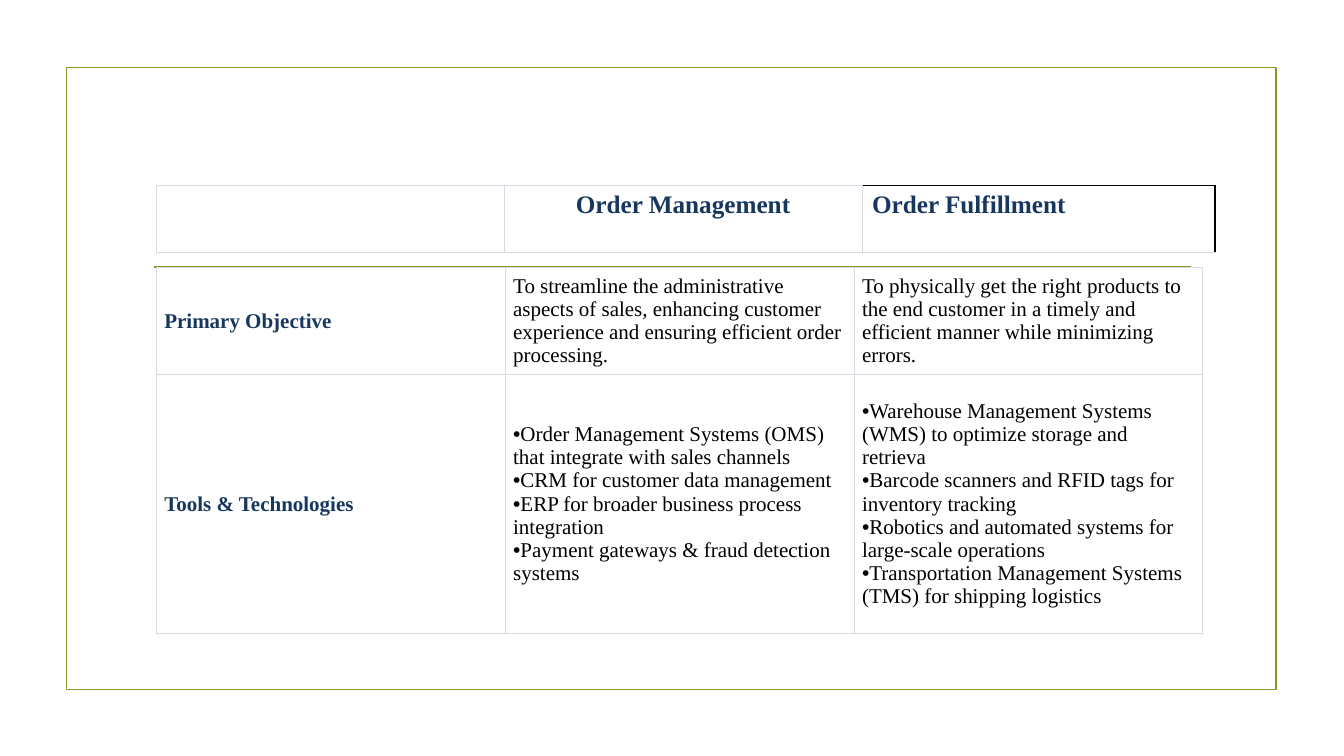
from dataclasses import dataclass

from lxml.etree import SubElement
from pptx import Presentation
from pptx.dml.color import RGBColor
from pptx.enum.shapes import MSO_CONNECTOR, MSO_SHAPE
from pptx.enum.text import MSO_ANCHOR, PP_ALIGN
from pptx.oxml.ns import qn
from pptx.slide import Slide
from pptx.table import Table, _Cell
from pptx.util import Inches, Pt

FONT = "Times New Roman"
OLIVE, NAVY, BLACK, GREY, WHITE = "83992A", "17375E", "000000", "D9D9E3", "FFFFFF"


@dataclass(frozen=True)
class Entry:
    lines: tuple[str, ...]
    size: int = 15
    colour: str = BLACK
    bold: bool = False
    bulleted: bool = False
    align: PP_ALIGN = PP_ALIGN.LEFT
    anchor: MSO_ANCHOR = MSO_ANCHOR.MIDDLE
    margins: tuple[float, float] = (0.08, 0.04)
    outer_edge: str = GREY


def heading(text: str, align: PP_ALIGN = PP_ALIGN.LEFT, outer_edge: str = GREY) -> Entry:
    return Entry((text,), 18, NAVY, True, align=align, anchor=MSO_ANCHOR.TOP,
                 margins=(0.1, 0.05), outer_edge=outer_edge)


def row_label(text: str) -> Entry:
    return Entry((text,), colour=NAVY, bold=True)


def tool_list(*tools: str) -> Entry:
    return Entry(tools, bulleted=True)


HEADINGS = [[
    heading(""),
    heading("Order Management", PP_ALIGN.CENTER),
    heading("Order Fulfillment", outer_edge=BLACK),
]]

COMPARISON = [
    [
        row_label("Primary Objective"),
        Entry(("To streamline the administrative aspects of sales, enhancing customer "
               "experience and ensuring efficient order processing.",)),
        Entry(("To physically get the right products to the end customer in a timely and "
               "efficient manner while minimizing errors.",)),
    ],
    [
        row_label("Tools & Technologies"),
        tool_list(
            "Order Management Systems (OMS) that integrate with sales channels",
            "CRM for customer data management",
            "ERP for broader business process integration",
            "Payment gateways & fraud detection systems",
        ),
        tool_list(
            "Warehouse Management Systems (WMS) to optimize storage and retrieva",
            "Barcode scanners and RFID tags for inventory tracking",
            "Robotics and automated systems for large-scale operations",
            "Transportation Management Systems (TMS) for shipping logistics",
        ),
    ],
]


def rgb(colour: str) -> RGBColor:
    return RGBColor.from_string(colour)


def set_borders(cell: _Cell, outer_edge: str) -> None:
    properties = cell._tc.get_or_add_tcPr()
    edges = {"a:lnL": GREY, "a:lnR": outer_edge, "a:lnT": outer_edge, "a:lnB": GREY}
    for tag, colour in edges.items():
        width = Pt(0.75) if colour == GREY else Pt(1)
        border = SubElement(properties, qn(tag), w=str(width))
        fill = SubElement(border, qn("a:solidFill"))
        SubElement(fill, qn("a:srgbClr"), val=colour)


def fill_cell(cell: _Cell, entry: Entry) -> None:
    set_borders(cell, entry.outer_edge)
    cell.fill.solid()
    cell.fill.fore_color.rgb = rgb(WHITE)
    cell.vertical_anchor = entry.anchor
    side, end = entry.margins
    cell.margin_left = cell.margin_right = Inches(side)
    cell.margin_top = cell.margin_bottom = Inches(end)
    cell.text_frame.text = "\n".join(entry.lines)
    for paragraph in cell.text_frame.paragraphs:
        if entry.bulleted:
            properties = paragraph._p.get_or_add_pPr()
            properties.set("marL", "0")
            properties.set("indent", "0")
            SubElement(properties, qn("a:buFont"), typeface="Arial")
            SubElement(properties, qn("a:buChar"), char="•")
        paragraph.alignment = entry.align
        for run in paragraph.runs:
            run.font.name = FONT
            run.font.size = Pt(entry.size)
            run.font.bold = entry.bold
            run.font.color.rgb = rgb(entry.colour)


def draw_table(slide: Slide, entries: list[list[Entry]], top: float,
               widths: list[float], heights: list[float]) -> Table:
    table = slide.shapes.add_table(
        len(heights), len(widths), Inches(1.55), Inches(top),
        Inches(sum(widths)), Inches(sum(heights))).table
    table.first_row = table.horz_banding = False
    for column, width in zip(table.columns, widths):
        column.width = Inches(width)
    for row, height, row_entries in zip(table.rows, heights, entries):
        row.height = Inches(height)
        for cell, entry in zip(row.cells, row_entries):
            fill_cell(cell, entry)
    return table


def draw_frame(slide: Slide) -> None:
    frame = slide.shapes.add_shape(
        MSO_SHAPE.RECTANGLE, Inches(0.66), Inches(0.67), Inches(12), Inches(6.17))
    frame.shadow.inherit = False
    frame.fill.background()
    frame.line.color.rgb = rgb(OLIVE)
    frame.line.width = Pt(1.25)


def draw_divider(slide: Slide) -> None:
    divider = slide.shapes.add_connector(
        MSO_CONNECTOR.STRAIGHT, Inches(1.53), Inches(2.65), Inches(11.81), Inches(2.65))
    divider.line.color.rgb = rgb(OLIVE)
    divider.line.width = Pt(1.25)
    SubElement(divider._element.spPr, qn("a:effectLst"))


def main() -> None:
    presentation = Presentation()
    presentation.slide_width = Inches(13.33)
    presentation.slide_height = Inches(7.5)
    slide = presentation.slides.add_slide(presentation.slide_layouts[6])
    draw_frame(slide)
    draw_divider(slide)
    draw_table(slide, COMPARISON, 2.65, [3.46] * 3, [1.07, 2.56])
    draw_table(slide, HEADINGS, 1.84, [3.45, 3.55, 3.5], [0.66])
    presentation.save("out.pptx")


if __name__ == "__main__":
    main()
